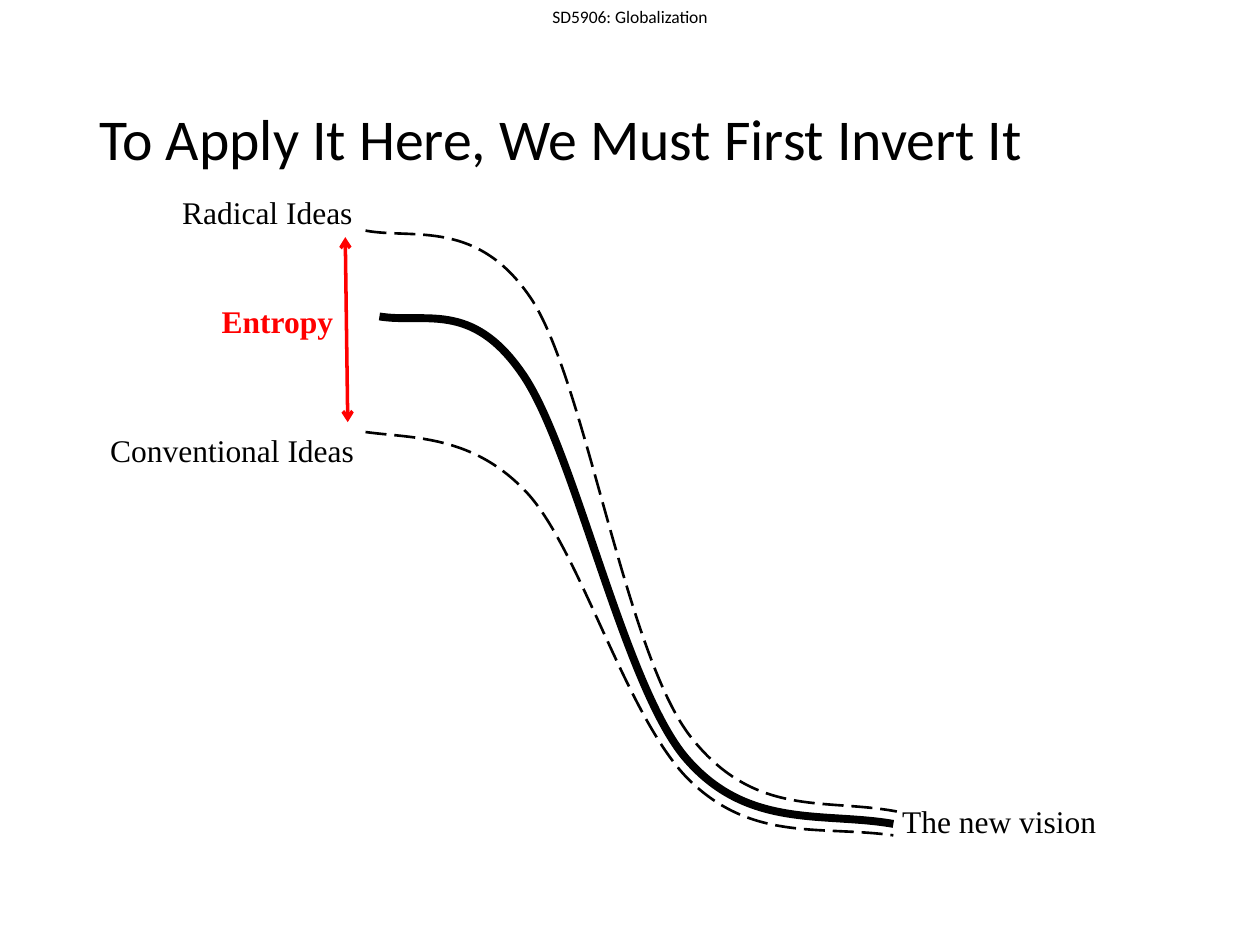
from pptx import Presentation
from pptx.dml.color import RGBColor
from pptx.enum.dml import MSO_LINE
from pptx.enum.shapes import MSO_CONNECTOR
from pptx.enum.text import MSO_ANCHOR, MSO_AUTO_SIZE, PP_ALIGN
from pptx.oxml.ns import qn
from pptx.util import Cm, Pt
from lxml.etree import SubElement

BLACK, RED = "000000", "FF0000"


def colour(value):
    return RGBColor.from_string(value)


def write(frame, text, size, font, ink, align):
    """Put one formatted paragraph in a text frame."""
    frame.text = text
    para = frame.paragraphs[0]
    para.alignment = align
    para.font.size = Pt(size)
    para.font.name = font
    para.font.color.rgb = colour(ink)
    return para


deck = Presentation()
deck.slide_width, deck.slide_height = Cm(25.4), Cm(19.05)
page = deck.slides.add_slide(deck.slide_layouts[5])

# Title
title = page.shapes.title
title.left, title.top, title.width, title.height = Cm(1.75), Cm(1.01), Cm(21.9), Cm(3.68)
title.text_frame.vertical_anchor = MSO_ANCHOR.MIDDLE
title.text_frame.auto_size = MSO_AUTO_SIZE.NONE
heading = write(title.text_frame, "To Apply It Here, We Must First Invert It",
                33, "Calibri", BLACK, PP_ALIGN.LEFT)
heading.line_spacing = 0.9

# Curves in hundredths of a centimetre: start, then (control, control, end) per segment
curves = [
    (4.5, None, [(765, 638), (856, 653), (950, 605), (1052, 752),
                 (1156, 899), (1255, 1372), (1379, 1524),
                 (1504, 1674), (1659, 1636), (1801, 1661)]),
    (1.5, MSO_LINE.LONG_DASH, [(737, 465), (833, 483), (965, 439), (1074, 607),
                               (1181, 777), (1260, 1308), (1389, 1481),
                               (1519, 1651), (1661, 1608), (1808, 1636)]),
    (1.5, MSO_LINE.LONG_DASH, [(737, 871), (831, 884), (953, 876), (1062, 993),
                               (1171, 1110), (1265, 1455), (1394, 1577),
                               (1521, 1697), (1654, 1664), (1801, 1684)]),
]
group = page.shapes.add_group_shape()
for weight, dash, points in curves:
    left, top = points[0]
    builder = group.shapes.build_freeform(left, top, scale=Cm(0.01))
    builder.add_line_segments(points[3::3], close=False)
    curve = builder.convert_to_shape()
    curve.shadow.inherit = False
    curve.fill.background()
    curve.line.color.rgb = colour(BLACK)
    curve.line.width = Pt(weight)
    curve.line.dash_style = dash
    # Bend each straight segment into a cubic curve
    for index, segment in enumerate(list(curve.element.iter(qn("a:lnTo")))):
        segment.tag = qn("a:cubicBezTo")
        for position, (x, y) in enumerate(points[3 * index + 1:3 * index + 3]):
            control = SubElement(segment, qn("a:pt"), x=str(x - left), y=str(y - top))
            segment.insert(position, control)

# Header and labels: text, left, top, width, height, size, font, colour, alignment
serif = "Times New Roman"
labels = [
    ("SD5906: Globalization", 0, 0, 25.4, 0.68, 10, "Calibri", BLACK, PP_ALIGN.CENTER),
    ("Entropy", 4.22, 5.97, 2.77, 1.02, 18, serif, RED, PP_ALIGN.LEFT),
    ("Radical Ideas", 2.03, 3.76, 5.33, 1.02, 18, serif, BLACK, PP_ALIGN.RIGHT),
    ("Conventional Ideas", 1.8, 8.56, 5.59, 1.02, 18, serif, BLACK, PP_ALIGN.RIGHT),
    ("The new vision", 16.74, 16.05, 6.81, 1.02, 18, serif, BLACK, PP_ALIGN.CENTER),
]
for text, left, top, width, height, size, font, ink, align in labels:
    box = page.shapes.add_textbox(Cm(left), Cm(top), Cm(width), Cm(height))
    box.text_frame.word_wrap = text != "Entropy"
    box.text_frame.auto_size = MSO_AUTO_SIZE.SHAPE_TO_FIT_TEXT
    para = write(box.text_frame, text, size, font, ink, align)
    if ink == RED:
        para.font.bold = True

# Double-headed entropy arrow
arrow = page.shapes.add_connector(MSO_CONNECTOR.STRAIGHT, Cm(6.96), Cm(4.78), Cm(7.01), Cm(8.51))
arrow.line.color.rgb = colour(RED)
arrow.line.width = Pt(2)
line = arrow.line._get_or_add_ln()
for end in ("a:headEnd", "a:tailEnd"):
    SubElement(line, qn(end), type="arrow")
SubElement(arrow.element.spPr, qn("a:effectLst"))

deck.save("out.pptx")
